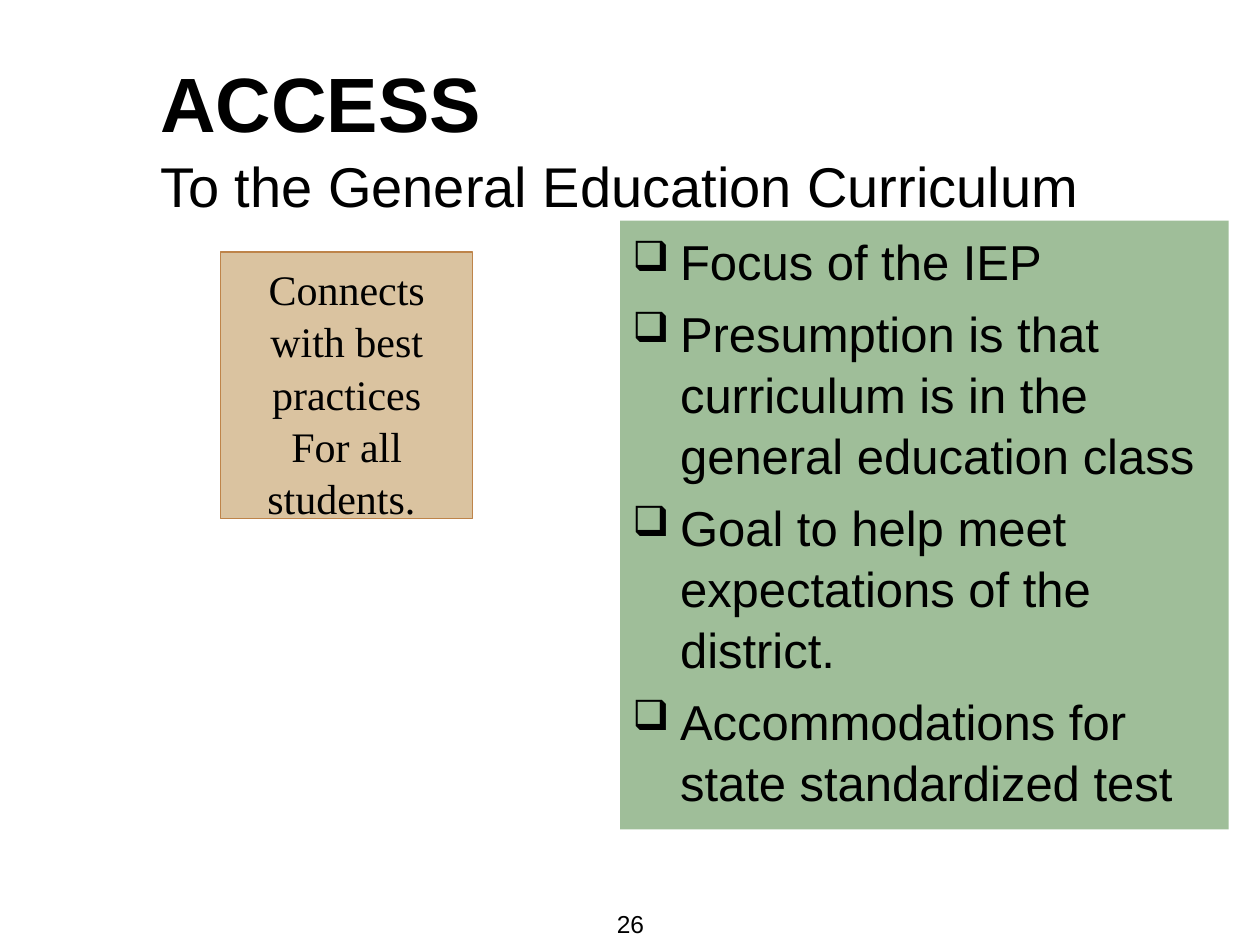
import pptx
import pptx.dml.color
import pptx.enum.shapes
import pptx.enum.text
import pptx.oxml.ns
import pptx.util
from lxml import etree

Cm, Pt = pptx.util.Cm, pptx.util.Pt
ALIGN = pptx.enum.text.PP_ALIGN
ANCHOR = pptx.enum.text.MSO_ANCHOR
INSET = Cm(0.13)


def color(code):
    return pptx.dml.color.RGBColor.from_string(code)


def assign(target, values):
    for name, value in values.items():
        setattr(target, name, value)


class Deck:
    ink = "000000"
    sans, serif = "Arial", "Times New Roman"

    def __init__(self, wide, high):
        self.show = pptx.Presentation()
        assign(self.show, {"slide_width": Cm(wide), "slide_height": Cm(high)})
        self.slide = self.show.slides.add_slide(self.show.slide_layouts[6])

    def panel(self, place, fill, edge=None):
        """Add a filled rectangle, with a thin edge if one is given."""
        shape = self.slide.shapes.add_shape(
            pptx.enum.shapes.MSO_SHAPE.RECTANGLE, *map(Cm, place))
        shape.shadow.inherit = False
        shape.fill.solid()
        shape.fill.fore_color.rgb = color(fill)
        if edge:
            shape.line.color.rgb = color(edge)
            shape.line.width = Pt(0.75)
        else:
            shape.line.fill.background()
        return shape

    def box(self, place):
        return self.slide.shapes.add_textbox(*map(Cm, place))

    def label(self, shape, paras, frame=None, para=None, bullet=None):
        """Fill a shape; each paragraph is a list of (text, font) lines."""
        body = shape.text_frame
        assign(body, {"word_wrap": True, "vertical_anchor": ANCHOR.TOP,
                      "margin_left": INSET, "margin_right": INSET,
                      "margin_top": INSET, "margin_bottom": INSET,
                      **(frame or {})})
        for i, lines in enumerate(paras):
            item = body.add_paragraph() if i else body.paragraphs[0]
            assign(item, para or {})
            if bullet:
                if i:
                    item.space_before = Pt(6)
                self.mark(item, bullet)
            for j, (text, font) in enumerate(lines):
                if j:
                    item.add_line_break()
                run = item.add_run()
                run.text = text
                assign(run.font, {"name": self.sans, **font})
                run.font.color.rgb = color(self.ink)

    def mark(self, item, sign):
        """Give a paragraph a hanging bullet."""
        props = item._p.get_or_add_pPr()
        indent = Cm(0.96)
        props.set("marL", str(indent))
        props.set("indent", str(-indent))
        for tag, key, value in (("a:buSzPct", "val", "85000"),
                                ("a:buChar", "char", sign)):
            node = etree.SubElement(props, pptx.oxml.ns.qn(tag))
            node.set(key, value)

    def save(self):
        self.show.save("out.pptx")


def main():
    deck = Deck(25.4, 19.05)

    # Page number
    deck.label(deck.box((12.29, 18.19, 0.84, 0.86)),
               [[("26", {"size": Pt(14)})]],
               {"word_wrap": False, "vertical_anchor": ANCHOR.BOTTOM},
               {"alignment": ALIGN.CENTER})

    # Title
    deck.label(deck.box((3.1, 1.07, 20.9, 3.28)),
               [[("ACCESS", {"size": Pt(44), "bold": True}),
                 ("To the General Education Curriculum", {"size": Pt(32)})]],
               {"vertical_anchor": ANCHOR.MIDDLE}, {"line_spacing": 1.06})

    # Green panel with the list
    deck.panel((12.5, 4.45, 12.27, 12.27), "9FBE99")
    points = ("Focus of the IEP",
              "Presumption is that curriculum is in the general education class",
              "Goal to help meet expectations of the district.",
              "Accommodations for state standardized test")
    deck.label(deck.box((12.62, 4.5, 12.01, 12.42)),
               [[(text, {"size": Pt(28)})] for text in points],
               para={"line_spacing": 1.04}, bullet="❑")

    # Tan note
    note = deck.panel((4.45, 5.08, 5.08, 5.38), "DAC3A0", "BE844A")
    font = {"name": deck.serif, "size": Pt(24)}
    deck.label(note,
               [[("Connects with best practices", font)],
                [("For all students. ", font)]],
               {"margin_top": Cm(0.19)},
               {"alignment": ALIGN.CENTER, "line_spacing": 1.04})

    deck.save()


if __name__ == "__main__":
    main()
